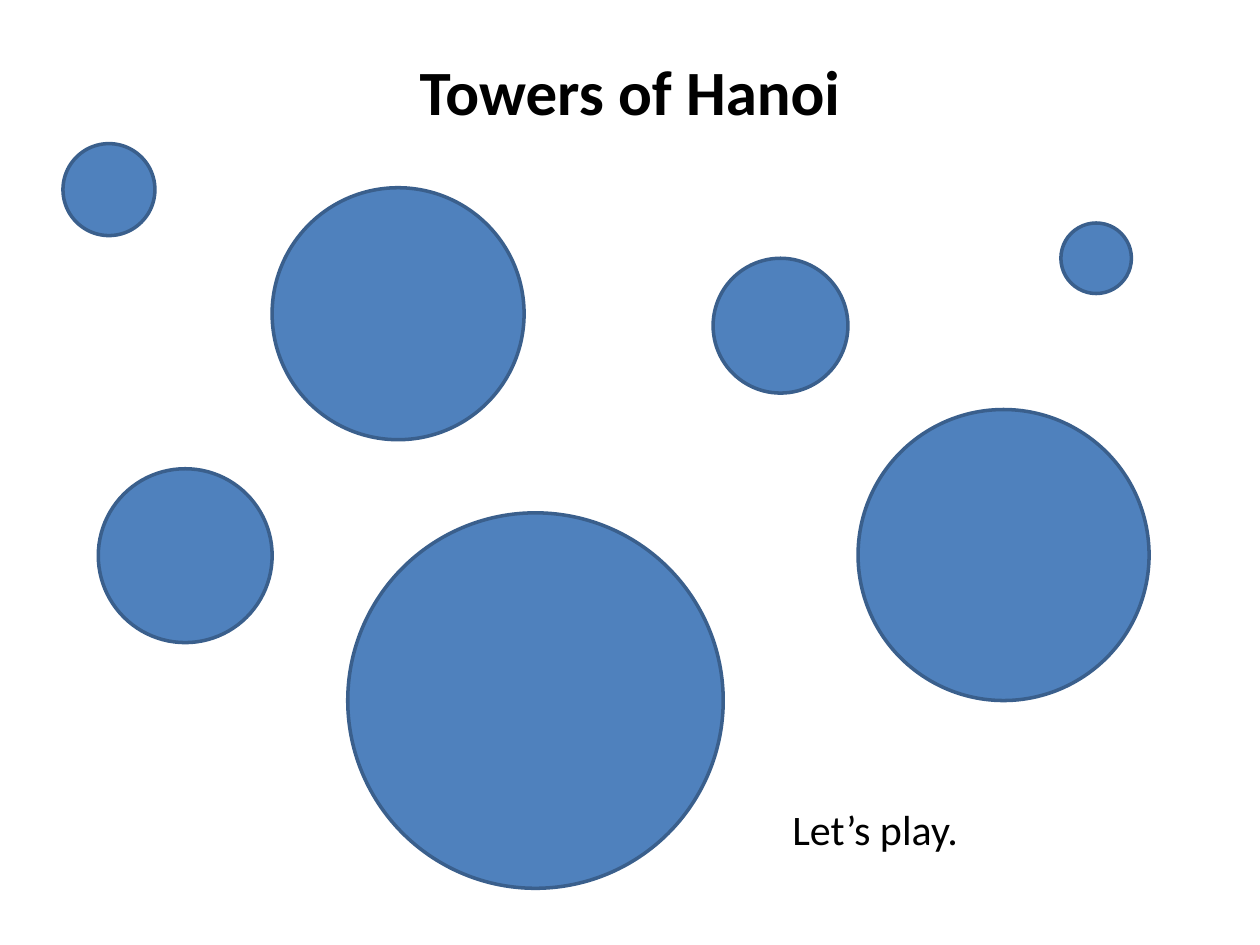
from typing import NamedTuple

from pptx import Presentation
from pptx.dml.color import RGBColor
from pptx.enum.shapes import MSO_SHAPE
from pptx.enum.text import MSO_ANCHOR, MSO_AUTO_SIZE, PP_ALIGN
from pptx.slide import Slide
from pptx.util import Inches, Pt

OVAL = MSO_SHAPE.OVAL
LEFT, CENTER = PP_ALIGN.LEFT, PP_ALIGN.CENTER
TOP, MIDDLE = MSO_ANCHOR.TOP, MSO_ANCHOR.MIDDLE
FIT_SHAPE, FIXED = MSO_AUTO_SIZE.SHAPE_TO_FIT_TEXT, MSO_AUTO_SIZE.NONE

SLIDE_WIDTH, SLIDE_HEIGHT = Inches(10), Inches(7.5)
CELL = SLIDE_WIDTH / 100  # square grid of 100 columns by 75 rows
FONT = "Calibri"
COLORS = {"text": "000000", "disk": "4F81BD", "rim": "3A5F8C"}


class Box(NamedTuple):
    column: float
    row: float
    columns: float
    rows: float


class Disk(NamedTuple):
    column: float
    row: float
    diameter: float


DISKS = [
    Disk(5, 11.4, 7.3),
    Disk(7.8, 37.2, 13.8),
    Disk(56.6, 20.5, 10.7),
    Disk(27.6, 40.7, 29.8),
    Disk(21.6, 14.9, 20),
    Disk(68.1, 32.5, 23.1),
    Disk(84.2, 17.7, 5.6),
]


def color(name: str) -> RGBColor:
    return RGBColor.from_string(COLORS[name])


def to_lengths(box: Box) -> list[int]:
    """Turn grid cells into slide lengths."""
    return [round(cells * CELL) for cells in box]


def add_text(slide: Slide, text: str, box: Box, *, size: float,
             bold: bool = False, align: PP_ALIGN = LEFT,
             anchor: MSO_ANCHOR = TOP,
             auto_size: MSO_AUTO_SIZE = FIXED) -> None:
    frame = slide.shapes.add_textbox(*to_lengths(box)).text_frame
    frame.word_wrap = True
    frame.auto_size = auto_size
    frame.vertical_anchor = anchor
    paragraph = frame.paragraphs[0]
    paragraph.alignment = align
    run = paragraph.add_run()
    run.text = text
    run.font.name = FONT
    run.font.size = Pt(size)
    run.font.bold = bold
    run.font.color.rgb = color("text")


def add_disk(slide: Slide, disk: Disk) -> None:
    box = Box(disk.column, disk.row, disk.diameter, disk.diameter)
    shape = slide.shapes.add_shape(OVAL, *to_lengths(box))
    shape.shadow.inherit = False
    shape.fill.solid()
    shape.fill.fore_color.rgb = color("disk")
    shape.line.color.rgb = color("rim")
    shape.line.width = Pt(2)


def main() -> None:
    presentation = Presentation()
    presentation.slide_width = SLIDE_WIDTH
    presentation.slide_height = SLIDE_HEIGHT
    slide = presentation.slides.add_slide(presentation.slide_layouts[6])

    add_text(slide, "Towers of Hanoi", Box(5, 3, 90, 8.4),
             size=36, bold=True, align=CENTER, anchor=MIDDLE)
    for disk in DISKS:
        add_disk(slide, disk)
    add_text(slide, "Let’s play.", Box(61.9, 63.3, 31.4, 5),
             size=24, auto_size=FIT_SHAPE)

    presentation.save("out.pptx")


if __name__ == "__main__":
    main()
